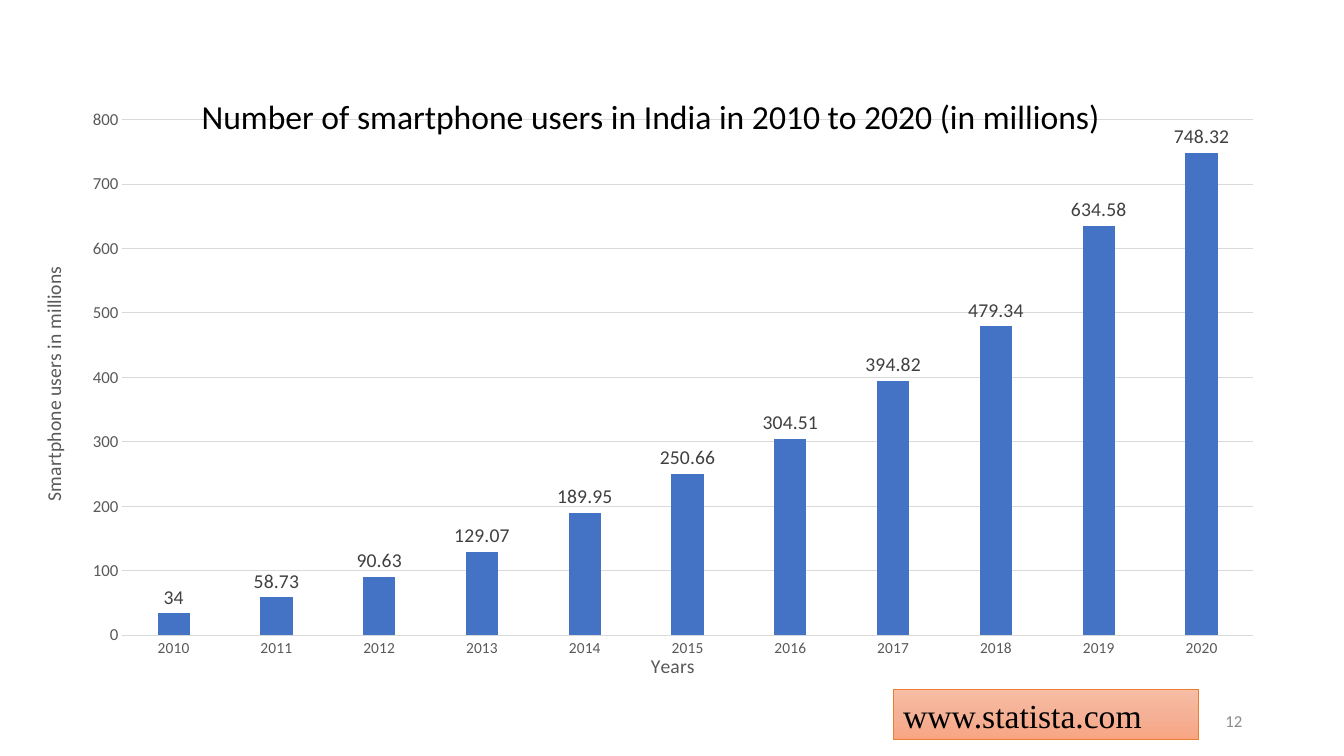
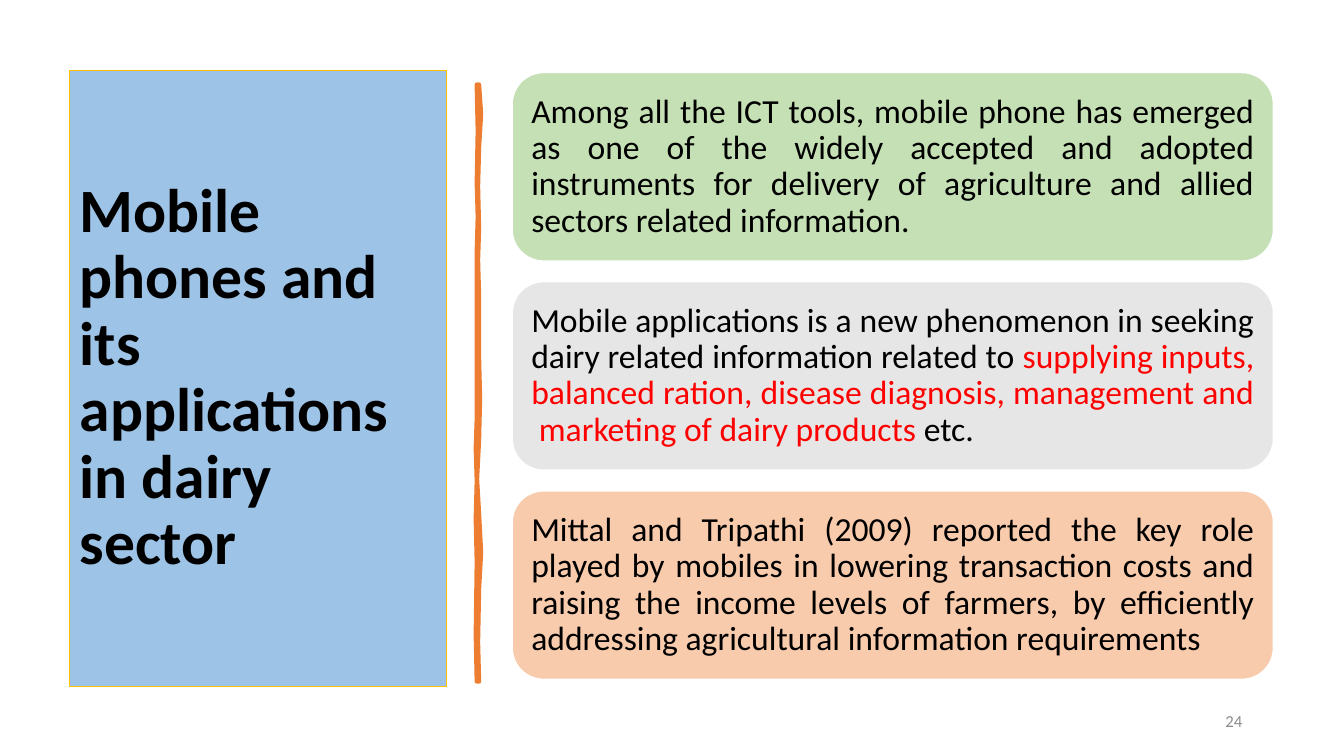
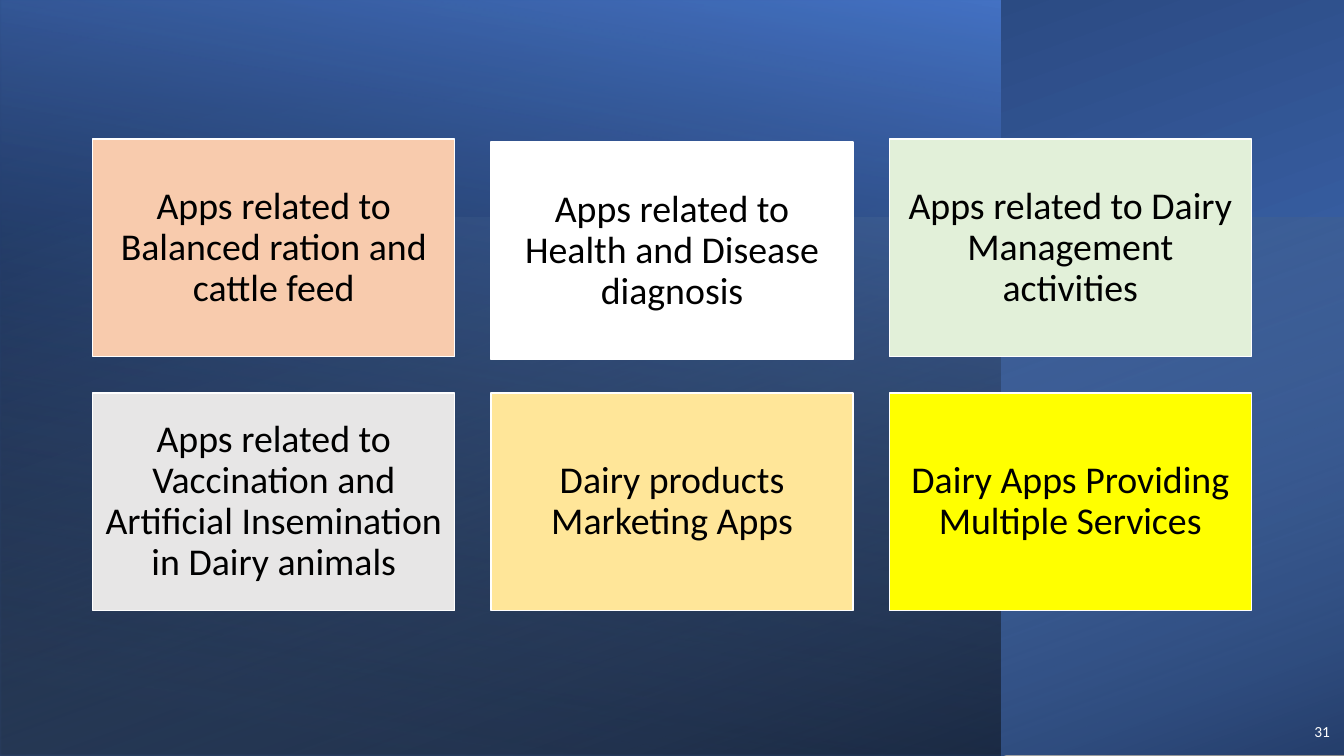
"""Build three slides on smartphones and dairy apps."""
from pptx import Presentation
from pptx.chart.data import CategoryChartData
from pptx.dml.color import RGBColor
from pptx.enum.chart import XL_CHART_TYPE, XL_LABEL_POSITION, XL_TICK_MARK
from pptx.enum.shapes import MSO_SHAPE
from pptx.enum.text import MSO_ANCHOR, MSO_AUTO_SIZE, PP_ALIGN
from pptx.oxml import parse_xml
from pptx.oxml.ns import nsdecls, qn
from pptx.util import Inches, Pt

HUES = {
    "black": "000000", "white": "FFFFFF", "red": "FF0000", "sky": "9DC3E6",
    "gold": "FFC000", "orange": "ED7D31", "blue": "4472C4", "navy": "203864",
    "leaf": "C5E0B4", "mint": "E2F0D9", "fog": "E7E6E6", "peach": "F8CBAD",
    "cream": "FFE699", "yellow": "FFFF00", "grid": "D9D9D9", "axis": "595959",
    "label": "404040", "number": "8C8C8C", "pale": "F7BDA5", "mid": "F5B196",
    "deep": "F8A582",
}
FONT = "Calibri"

USERS = {
    "2010": 34, "2011": 58.73, "2012": 90.63, "2013": 129.07, "2014": 189.95,
    "2015": 250.66, "2016": 304.51, "2017": 394.82, "2018": 479.34,
    "2019": 634.58, "2020": 748.32,
}
HEAD = "Number of smartphone users in India in 2010 to 2020 (in millions)"
SITE = "www.statista.com"
TOPIC = "Mobile phones and its applications in dairy sector"
NOTES = [
    ("leaf", [("Among all the ICT tools, mobile phone has emerged as one of the "
               "widely accepted and adopted instruments for delivery of "
               "agriculture and allied sectors related information.", "black")]),
    ("fog", [("Mobile applications is a new phenomenon in seeking dairy related "
              "information related to ", "black"),
             ("supplying inputs, balanced ration, disease diagnosis, management "
              "and  marketing of dairy products ", "red"),
             ("etc.", "black")]),
    ("peach", [("Mittal and Tripathi (2009) reported the key role played by "
                "mobiles in lowering transaction costs and raising the income "
                "levels of farmers, by efficiently addressing agricultural "
                "information requirements", "black")]),
]
BRUSH = [
    (4.75, 0.84), (4.77, 1.13), (4.75, 1.46), (4.74, 1.85), (4.75, 2.26),
    (4.74, 2.58), (4.75, 2.94), (4.75, 3.56), (4.76, 3.95), (4.75, 4.36),
    (4.73, 4.75), (4.75, 5.1), (4.77, 5.48), (4.75, 5.84), (4.74, 6.37),
    (4.75, 6.76), (4.73, 6.76), (4.72, 6.3), (4.73, 5.57), (4.72, 5.15),
    (4.73, 4.77), (4.72, 4.45), (4.73, 4.15), (4.73, 3.35), (4.73, 2.5),
    (4.74, 2.15), (4.73, 1.81), (4.74, 1.3), (4.73, 0.84),
]
APPS = [
    ("Apps related to Balanced ration and cattle feed", "peach", 0),
    ("Apps related to Health and Disease diagnosis", "white", 0.03),
    ("Apps related to Dairy Management activities", "mint", 0),
    ("Apps related to Vaccination and Artificial Insemination in Dairy animals",
     "fog", 0),
    ("Dairy products Marketing Apps", "cream", 0),
    ("Dairy Apps Providing Multiple Services", "yellow", 0),
]
SHADES = [
    ((2.92, -2.92, 7.5, 13.33), 270, 200,
     [(8, "blue", 100), (100, "navy", 100)]),
    ((0, 0, 9.92, 7.5), 180, 80, [(8, "black", 52), (100, "blue", 100)]),
    ((3.99, -1.84, 5.35, 13.34), 270, 20,
     [(0, "sky", 0), (100, "black", 46)]),
]


def rgb(hue):
    """Return the named colour."""
    return RGBColor.from_string(HUES[hue])


def style(font, size, hue, name=FONT, bold=False):
    """Set size, colour, face and weight of a font."""
    font.size, font.name, font.bold = Pt(size), name, bold
    font.color.rgb = rgb(hue)


def paint(shape, fill=None, line=None, width=1):
    """Set fill and outline and drop the shadow."""
    shape.shadow.inherit = False
    if fill:
        shape.fill.solid()
        shape.fill.fore_color.rgb = rgb(fill)
    if line:
        shape.line.color.rgb = rgb(line)
        shape.line.width = Pt(width)
    else:
        shape.line.fill.background()


def blend(shape, stops, angle):
    """Fill a shape with a linear gradient of (place, colour, opacity) stops."""
    marks = "".join(
        f'<a:gs pos="{place * 1000}"><a:srgbClr val="{HUES[hue]}">'
        f'<a:alpha val="{alpha * 1000}"/></a:srgbClr></a:gs>'
        for place, hue, alpha in stops)
    shape.fill.background()
    props = shape._element.spPr
    props.replace(props.find(qn("a:noFill")), parse_xml(
        f'<a:gradFill {nsdecls("a")} rotWithShape="1"><a:gsLst>{marks}</a:gsLst>'
        f'<a:lin ang="{angle * 60000}" scaled="0"/></a:gradFill>'))


def write(shape, runs, size, hue="black", align=PP_ALIGN.LEFT, name=FONT,
          bold=False, space=None, inset=None):
    """Write one paragraph, given as text or as (text, colour) runs."""
    frame = shape.text_frame
    frame.word_wrap = True
    frame.auto_size = MSO_AUTO_SIZE.NONE
    frame.vertical_anchor = MSO_ANCHOR.MIDDLE
    if inset:
        frame.margin_left = frame.margin_right = Inches(inset)
        frame.margin_top = frame.margin_bottom = Inches(inset)
    para = frame.paragraphs[0]
    para.alignment, para.line_spacing = align, space
    if isinstance(runs, str):
        para.text = runs
    else:
        for text, tint in runs:
            run = para.add_run()
            run.text = text
            run.font.color.rgb = rgb(tint)
    style(para.font, size, hue, name, bold)


def block(slide, box, kind=MSO_SHAPE.RECTANGLE):
    """Add a preset shape at a box given in inches."""
    return slide.shapes.add_shape(kind, *map(Inches, box))


def number(slide, text, box=(9.42, 6.95, 3, 0.4), size=12, hue="number"):
    """Add the slide number."""
    write(slide.shapes.add_textbox(*map(Inches, box)), text, size, hue,
          PP_ALIGN.RIGHT)


def label(owner, text, size, hue):
    """Title a chart or an axis."""
    frame = (owner.chart_title if hasattr(owner, "chart_title")
             else owner.axis_title).text_frame
    frame.text = text
    style(frame.paragraphs[0].font, size, hue)


def graph(slide):
    """Add the column chart of users by year."""
    data = CategoryChartData()
    data.categories = list(USERS)
    data.add_series("Series 1", list(USERS.values()))
    box = map(Inches, (0.36, 0.7, 12.19, 6.09))
    chart = slide.shapes.add_chart(
        XL_CHART_TYPE.COLUMN_CLUSTERED, *box, data).chart
    style(chart.font, 10, "black")
    chart.has_legend = False
    label(chart, HEAD, 24, "black")
    years, count = chart.category_axis, chart.value_axis
    for axis, text, size in ((years, "Years", 11),
                             (count, "Smartphone users in millions", 12)):
        label(axis, text, 14, "axis")
        style(axis.tick_labels.font, size, "axis")
        axis.major_tick_mark = XL_TICK_MARK.NONE
    count.maximum_scale, count.minimum_scale, count.major_unit = 800, 0, 100
    count.format.line.fill.background()
    for edge in (years.format.line, count.major_gridlines.format.line):
        edge.color.rgb = rgb("grid")
        edge.width = Pt(0.75)
    plot = chart.plots[0]
    plot.gap_width, plot.overlap, plot.vary_by_categories = 219, -27, False
    bars = plot.series[0]
    bars.format.fill.solid()
    bars.format.fill.fore_color.rgb = rgb("blue")
    tags = bars.data_labels
    tags.show_value, tags.position = True, XL_LABEL_POSITION.OUTSIDE_END
    style(tags.font, 14, "label")
    area = chart._chartSpace.chart.plotArea
    for old in area.findall(qn("c:layout")):
        area.remove(old)
    sides = "".join(f'<c:{key} val="{val}"/>' for key, val in (
        ("layoutTarget", "inner"), ("xMode", "edge"), ("yMode", "edge"),
        ("x", 0.07), ("y", 0.08), ("w", 0.92), ("h", 0.84)))
    area.insert(0, parse_xml(
        f'<c:layout {nsdecls("c")}><c:manualLayout>{sides}'
        '</c:manualLayout></c:layout>'))


def growth(slide):
    """Show the growth in users."""
    graph(slide)
    badge = block(slide, (8.86, 6.84, 3.03, 0.5))
    paint(badge, line="orange", width=0.5)
    blend(badge, [(0, "pale", 100), (50, "mid", 100), (100, "deep", 100)], 90)
    write(badge, SITE, 24, name="Times New Roman")
    number(slide, "12")


def phones(slide):
    """Show the topic panel and its three notes."""
    title = slide.shapes.title
    title.left, title.top, title.width, title.height = map(
        Inches, (0.69, 0.7, 3.74, 6.11))
    title.fill.solid()
    title.fill.fore_color.rgb = rgb("sky")
    title.line.color.rgb = rgb("gold")
    title.line.width = Pt(0.5)
    write(title, TOPIC, 44, bold=True, space=0.9)
    knots = [(Inches(x), Inches(y)) for x, y in BRUSH]
    pen = slide.shapes.build_freeform(*knots[0])
    pen.add_line_segments(knots[1:], close=True)
    paint(pen.convert_to_shape(), "orange", "orange", 3.25)
    for row, (fill, runs) in enumerate(NOTES):
        card = block(slide, (5.08, 0.72 + row * 2.075, 7.55, 1.87),
                     MSO_SHAPE.ROUNDED_RECTANGLE)
        paint(card, fill, "white")
        write(card, runs, 24, align=PP_ALIGN.JUSTIFY, space=0.9, inset=0.1)
    number(slide, "24")


def kinds(slide):
    """Show the six kinds of apps on a shaded backdrop."""
    for box, turn, angle, stops in SHADES:
        shade = block(slide, box)
        paint(shade)
        blend(shade, stops, angle)
        shade.rotation = turn
        shade._element.spPr.xfrm.set("flipH", "1")
    number(slide, "31", (12.8, 7.06, 0.49, 0.4), 11, "white")
    for spot, (text, fill, drop) in enumerate(APPS):
        row, col = divmod(spot, 3)
        card = block(slide, (0.92 + col * 3.95, 1.38 + row * 2.52 + drop,
                             3.59, 2.16))
        paint(card, fill, "white")
        write(card, text, 27, align=PP_ALIGN.CENTER, space=0.9, inset=0.11)


def main():
    """Build and save the deck."""
    deck = Presentation()
    deck.slide_width, deck.slide_height = Inches(13.33), Inches(7.5)
    for draw, layout in ((growth, 6), (phones, 5), (kinds, 6)):
        draw(deck.slides.add_slide(deck.slide_layouts[layout]))
    deck.save("out.pptx")


if __name__ == "__main__":
    main()
